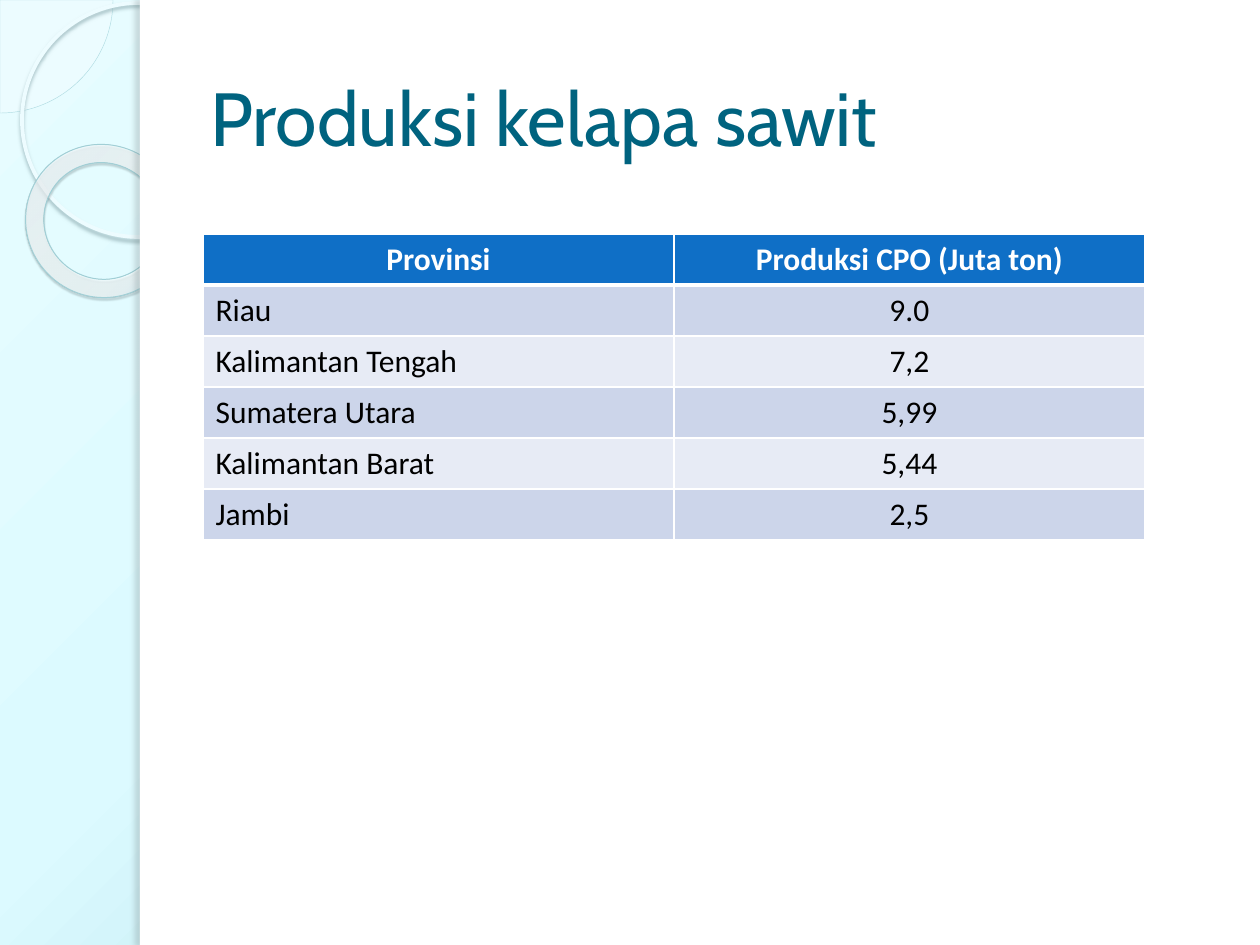
from dataclasses import dataclass
from typing import Optional

from lxml import etree
from pptx import Presentation
from pptx import util as u
from pptx.dml.color import RGBColor
from pptx.enum import shapes, text
from pptx.oxml.ns import qn

PX = 914400 / 126  # EMU in one px
KIND = shapes.MSO_SHAPE
COLORS = {
    "title": "00637F", "header": "0F6FC6", "band_dark": "CCD5EA",
    "band_light": "E7EBF5", "white": "FFFFFF", "black": "000000",
    "bg_start": "E7FCFF", "bg_mid": "DCFAFF", "bg_end": "92CED7",
    "pie": "F8FEFF", "pie_line": "AFDBE2",
    "ring_line": "EDFCFF", "ring_shadow": "9CB9BE",
    "donut_start": "F9FEFF", "donut_mid": "FDFFFF", "donut_end": "9EF2FF",
    "donut_line": "A1CFD6", "donut_shadow": "4B5E61", "edge_shadow": "6C7A7C",
}


@dataclass
class Gradient:
    stops: list[tuple[int, str, int]]  # position %, colour, opacity %
    focus: tuple[int, int, int, int]  # left, top, right, bottom in %


@dataclass
class Shadow:
    color: str
    alpha: int
    blur: float
    dist: float
    angle: int


@dataclass
class Decor:
    kind: KIND
    box: tuple[int, int, int, int]
    fill: Optional[str] = None
    alpha: int = 100
    gradient: Optional[Gradient] = None
    line: Optional[tuple[str, float]] = None
    shadow: Optional[Shadow] = None
    adjust: tuple[float, ...] = ()
    rotation: float = 0


BACKDROP = Gradient([(0, "bg_start", 100), (40, "bg_mid", 100), (100, "bg_end", 100)],
                    (-24, -20, 124, 120))
DONUT = Gradient([(0, "donut_start", 70), (70, "donut_mid", 55), (100, "donut_end", 60)],
                 (-408, -50, 508, 150))
DECOR = [
    Decor(KIND.PIE, (-113, -113, 226, 226), fill="pie", alpha=33,
          line=("pie_line", 0.25), adjust=(0, 54.02)),
    Decor(KIND.OVAL, (22, 3, 234, 234), line=("ring_line", 2.15),
          shadow=Shadow("ring_shadow", 85, 2, 2, 90)),
    Decor(KIND.DONUT, (25, 145, 155, 152), gradient=DONUT, line=("donut_line", 0.58),
          shadow=Shadow("donut_shadow", 35, 1, 1.2, 75), adjust=(0.12,), rotation=38.6),
    Decor(KIND.RECTANGLE, (140, 0, 1120, 945), fill="white"),
    Decor(KIND.RECTANGLE, (140, 0, 10, 945), fill="white",
          shadow=Shadow("edge_shadow", 25, 3, 3, 180)),
]
ROWS = [
    ("Provinsi", "Produksi CPO (Juta ton)"),
    ("Riau", "9.0"),
    ("Kalimantan Tengah", "7,2"),
    ("Sumatera Utara", "5,99"),
    ("Kalimantan Barat", "5,44"),
    ("Jambi", "2,5"),
]


def px(n: int) -> u.Emu:
    return u.Emu(round(n * PX))


def rgb(name: str) -> RGBColor:
    return RGBColor.from_string(COLORS[name])


def sub(parent, tag: str, **attrs):
    return etree.SubElement(parent, qn(tag), {k: str(v) for k, v in attrs.items()})


def add_color(parent, name: str, alpha: int) -> None:
    clr = sub(parent, "a:srgbClr", val=COLORS[name])
    if alpha < 100:
        sub(clr, "a:alpha", val=alpha * 1000)


def set_gradient(props, g: Gradient) -> None:
    """Put a circular gradient in the place of an empty fill."""
    grad = etree.Element(qn("a:gradFill"), rotWithShape="1")
    stops = sub(grad, "a:gsLst")
    for pos, name, alpha in g.stops:
        add_color(sub(stops, "a:gs", pos=pos * 1000), name, alpha)
    circle = sub(grad, "a:path", path="circle")
    sub(circle, "a:fillToRect", **{k: v * 1000 for k, v in zip("ltrb", g.focus)})
    props.replace(props.find(qn("a:noFill")), grad)


def add_decor(s, d: Decor) -> None:
    sp = s.shapes.add_shape(d.kind, *map(px, d.box))
    sp.rotation = d.rotation
    for i, value in enumerate(d.adjust):
        sp.adjustments[i] = value
    props = sp.element.spPr
    if d.fill:
        sp.fill.solid()
        sp.fill.fore_color.rgb = rgb(d.fill)
        if d.alpha < 100:
            clr = props.find(qn("a:solidFill")).find(qn("a:srgbClr"))
            sub(clr, "a:alpha", val=d.alpha * 1000)
    else:
        sp.fill.background()
    if d.gradient:
        set_gradient(props, d.gradient)
    if d.line:
        sp.line.color.rgb = rgb(d.line[0])
        sp.line.width = u.Pt(d.line[1])
    else:
        sp.line.fill.background()
    sp.shadow.inherit = False
    if d.shadow:
        sh = d.shadow
        outer = sub(props.find(qn("a:effectLst")), "a:outerShdw",
                    blurRad=u.Pt(sh.blur), dist=u.Pt(sh.dist),
                    dir=sh.angle * 60000, algn="tl", rotWithShape=0)
        add_color(outer, sh.color, sh.alpha)


def add_title(s, words: str) -> None:
    tf = s.shapes.add_textbox(px(198), px(38), px(1033), px(157)).text_frame
    tf.word_wrap = True
    tf.vertical_anchor = text.MSO_ANCHOR.MIDDLE
    p = tf.paragraphs[0]
    p.text = words
    p.font.name, p.font.size = "Cabin", u.Pt(43)
    p.font.color.rgb = rgb("title")


def set_borders(cell, top: int, bottom: int) -> None:
    props = cell._tc.get_or_add_tcPr()
    sides = (("a:lnL", 1), ("a:lnR", 1), ("a:lnT", top), ("a:lnB", bottom))
    for i, (tag, width) in enumerate(sides):
        ln = etree.Element(qn(tag), w=str(u.Pt(width)))
        add_color(sub(ln, "a:solidFill"), "white", 100)
        props.insert(i, ln)


def add_production_table(s, rows: list[tuple[str, str]]) -> None:
    row_h = 51
    table = s.shapes.add_table(len(rows), 2, px(203), px(234),
                               px(942), px(row_h * len(rows))).table
    for r, row in enumerate(rows):
        header = r == 0
        fill = "header" if header else ("band_light", "band_dark")[r % 2]
        for c, words in enumerate(row):
            cell = table.cell(r, c)
            cell.fill.solid()
            cell.fill.fore_color.rgb = rgb(fill)
            set_borders(cell, top=3 if r == 1 else 1, bottom=3 if header else 1)
            p = cell.text_frame.paragraphs[0]
            p.text = words
            p.alignment = text.PP_ALIGN.CENTER if header or c else text.PP_ALIGN.LEFT
            p.font.name, p.font.size, p.font.bold = "Calibri", u.Pt(18), header
            p.font.color.rgb = rgb("white" if header else "black")


def main() -> None:
    prs = Presentation()
    prs.slide_width, prs.slide_height = px(1260), px(945)
    s = prs.slides.add_slide(prs.slide_layouts[6])

    # Background and side decoration
    s.background.fill.background()
    set_gradient(s.element.find(".//" + qn("p:bgPr")), BACKDROP)
    for d in DECOR:
        add_decor(s, d)

    # Content
    add_title(s, "Produksi kelapa sawit")
    add_production_table(s, ROWS)
    prs.save("out.pptx")


if __name__ == "__main__":
    main()
